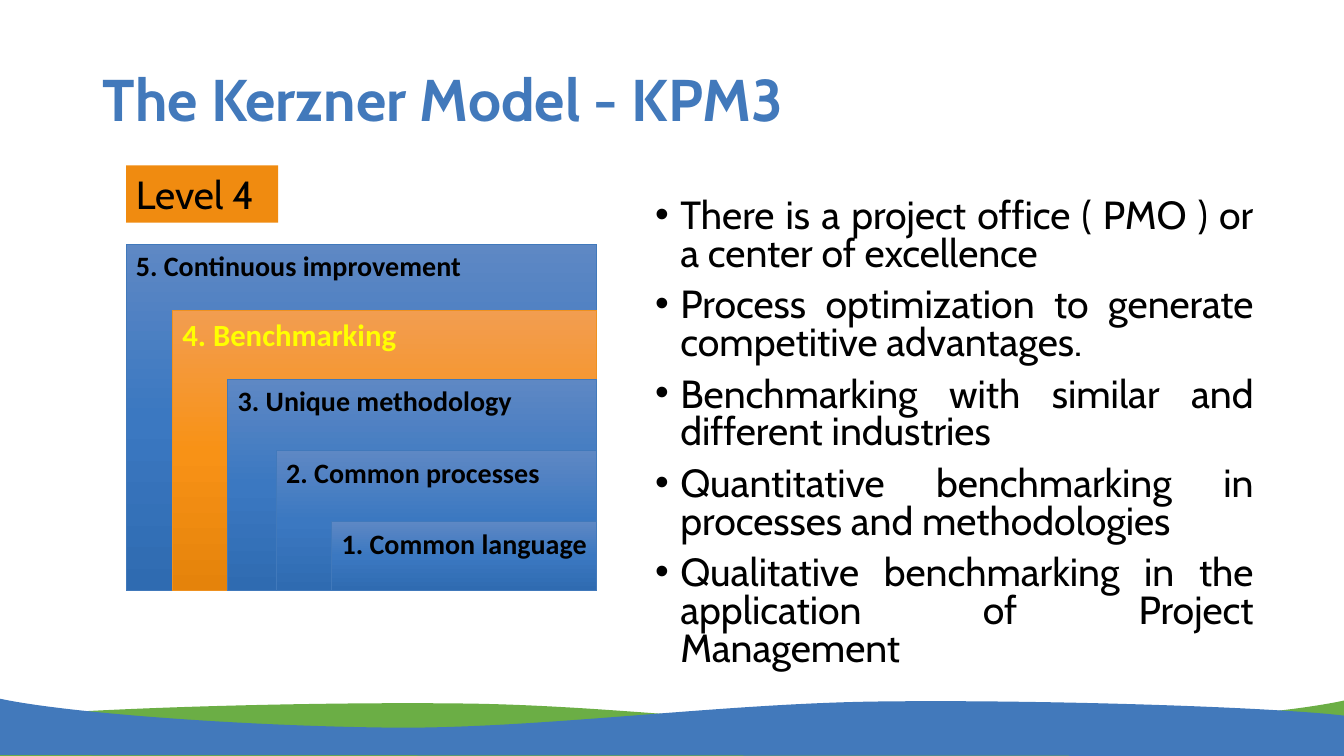
import copy

import pptx
import pptx.dml.color
import pptx.enum.shapes
import pptx.enum.text
import pptx.oxml
import pptx.oxml.ns
import pptx.util

Inches = pptx.util.Inches
Pt = pptx.util.Pt
RGBColor = pptx.dml.color.RGBColor
Align = pptx.enum.text.PP_ALIGN
Anchor = pptx.enum.text.MSO_ANCHOR
qn = pptx.oxml.ns.qn
OxmlElement = pptx.oxml.xmlchemy.OxmlElement

BLUE = RGBColor(0x42, 0x79, 0xBB)
GREEN = RGBColor(0x6B, 0xAE, 0x45)
ORANGE = RGBColor(0xF0, 0x8B, 0x10)
BLACK = RGBColor(0, 0, 0)
YELLOW = RGBColor(0xFF, 0xFF, 0)
BLUE_EDGE = RGBColor(0x41, 0x79, 0xBB)
ORANGE_EDGE = RGBColor(0xEE, 0x91, 0x20)
BLUE_SHADES = (RGBColor(0x5E, 0x88, 0xC4), RGBColor(0x3B, 0x78, 0xC1),
               RGBColor(0x2F, 0x6B, 0xB1))
ORANGE_SHADES = (RGBColor(0xF2, 0x9D, 0x50), RGBColor(0xF8, 0x92, 0x16),
                 RGBColor(0xE5, 0x83, 0x0B))


class SlideBuilder:
    text_font = "Cabin"
    panel_font = "Calibri"

    def __init__(self, deck):
        self.page = deck.slides.add_slide(deck.slide_layouts[5])

    def style(self, para, size, color, name=None, bold=False):
        para.font.name = name or self.text_font
        para.font.size = Pt(size)
        para.font.bold = bold
        para.font.color.rgb = color

    def wave(self, crest, corners, color):
        """Draw a crest of cubic curves (start, then point triples) over corners."""
        points = [(Inches(x), Inches(y)) for x, y in crest + corners]
        builder = self.page.shapes.build_freeform(*points[0], scale=1.0)
        builder.add_line_segments(points[1:], close=True)
        shape = builder.convert_to_shape()
        shape.shadow.inherit = False
        shape.fill.solid()
        shape.fill.fore_color.rgb = color
        shape.line.fill.background()
        # Turn each three crest segments into one curve
        segments = list(shape._element.iter(qn("a:lnTo")))[:len(crest) - 1]
        for first in range(0, len(segments), 3):
            curve = OxmlElement("a:cubicBezTo")
            segments[first].addprevious(curve)
            for segment in segments[first:first + 3]:
                curve.append(segment[0])
                segment.getparent().remove(segment)

    def title(self, text, left, top, width, height):
        box = self.page.shapes.title
        box.left, box.top = Inches(left), Inches(top)
        box.width, box.height = Inches(width), Inches(height)
        frame = box.text_frame
        frame.text = text
        frame.auto_size = pptx.enum.text.MSO_AUTO_SIZE.NONE
        frame.vertical_anchor = Anchor.MIDDLE
        para = frame.paragraphs[0]
        para.alignment = Align.LEFT
        para.line_spacing = 0.9
        self.style(para, 42, BLUE, bold=True)

    def bullets(self, items, left, top, width, height):
        box = self.page.shapes.add_textbox(
            Inches(left), Inches(top), Inches(width), Inches(height))
        frame = box.text_frame
        frame.word_wrap = True
        for index, item in enumerate(items):
            para = frame.add_paragraph() if index else frame.paragraphs[0]
            para.text = item
            para.alignment = Align.JUSTIFY
            para.line_spacing = 0.8
            para.space_before = Pt(10)
            self.style(para, 28, BLACK)
            # Hanging bullet
            props = para._p.get_or_add_pPr()
            props.set("marL", str(Inches(0.25)))
            props.set("indent", str(-Inches(0.25)))
            for tag, key, value in (("a:buFont", "typeface", "Arial"),
                                    ("a:buChar", "char", "•")):
                mark = OxmlElement(tag)
                mark.set(key, value)
                props.insert_element_before(mark, "a:tabLst", "a:defRPr", "a:extLst")

    def block(self, text, left, top, width, height):
        shape = self.page.shapes.add_shape(
            pptx.enum.shapes.MSO_SHAPE.RECTANGLE,
            Inches(left), Inches(top), Inches(width), Inches(height))
        shape.shadow.inherit = False
        frame = shape.text_frame
        frame.text = text
        frame.word_wrap = True
        frame.margin_right = Inches(0.05)
        frame.vertical_anchor = Anchor.TOP
        frame.paragraphs[0].alignment = Align.LEFT
        return shape

    def tag(self, text, left, top, width, height):
        shape = self.block(text, left, top, width, height)
        shape.fill.solid()
        shape.fill.fore_color.rgb = ORANGE
        shape.line.fill.background()
        self.style(shape.text_frame.paragraphs[0], 28, BLACK)

    def panel(self, text, left, top, right, bottom, active):
        shape = self.block(text, left, top, right - left, bottom - top)
        shape.line.color.rgb = ORANGE_EDGE if active else BLUE_EDGE
        shape.line.width = Pt(0.5)
        self.style(shape.text_frame.paragraphs[0], 22 if active else 20,
                   YELLOW if active else BLACK, self.panel_font, bold=True)
        # Three-stop gradient running downwards
        shape.fill.gradient()
        shape.fill.gradient_angle = 270
        stops = shape._element.spPr.find(".//" + qn("a:gsLst"))
        stops.append(copy.deepcopy(stops[-1]))
        shades = ORANGE_SHADES if active else BLUE_SHADES
        for index, stop in enumerate(shape.fill.gradient_stops):
            stop.color.rgb = shades[index]
            stop.position = index / 2


def main():
    deck = pptx.Presentation()
    deck.slide_width, deck.slide_height = Inches(13.33), Inches(7.5)
    slide = SlideBuilder(deck)

    # Footer waves
    green_crest = [(-0.01, 7.12),
                   (0.76, 7.03), (3.06, 6.96), (4.62, 6.98),
                   (6.18, 7), (7.89, 7.24), (9.35, 7.24),
                   (10.8, 7.23), (12.65, 7.1), (13.33, 6.95)]
    blue_crest = [(13.33, 7.1),
                  (12.56, 7.01), (10.26, 6.94), (8.7, 6.96),
                  (7.15, 6.98), (5.43, 7.22), (3.98, 7.22),
                  (2.53, 7.21), (0.68, 7.08), (-0.01, 6.93)]
    slide.wave(green_crest, [(13.34, 7.5), (0, 7.52)], GREEN)
    slide.wave(blue_crest, [(-0.01, 7.49), (13.33, 7.5)], BLUE)

    # Title and bullet list
    slide.title("The Kerzner Model - KPM3", 0.92, 0.29, 11.5, 1.45)
    slide.bullets([
        "There is a project office ( PMO ) or a center of excellence",
        "Process optimization to generate competitive advantages.",
        "Benchmarking with similar and different industries",
        "Quantitative benchmarking in processes and methodologies",
        "Qualitative benchmarking in the application of Project Management",
    ], 6.4, 1.93, 6.13, 4.89)

    # Nested maturity levels sharing their lower right corner
    slide.tag("Level 4", 1.25, 1.64, 1.51, 0.57)
    levels = [
        ("5. Continuous improvement", 1.25, 2.42),
        ("4. Benchmarking", 1.71, 3.08),
        ("3. Unique methodology", 2.26, 3.76),
        ("2. Common processes", 2.74, 4.47),
        ("1. Common language", 3.29, 5.17),
    ]
    for text, left, top in levels:
        slide.panel(text, left, top, 5.92, 5.86, active=text.startswith("4"))

    deck.save("out.pptx")


if __name__ == "__main__":
    main()
